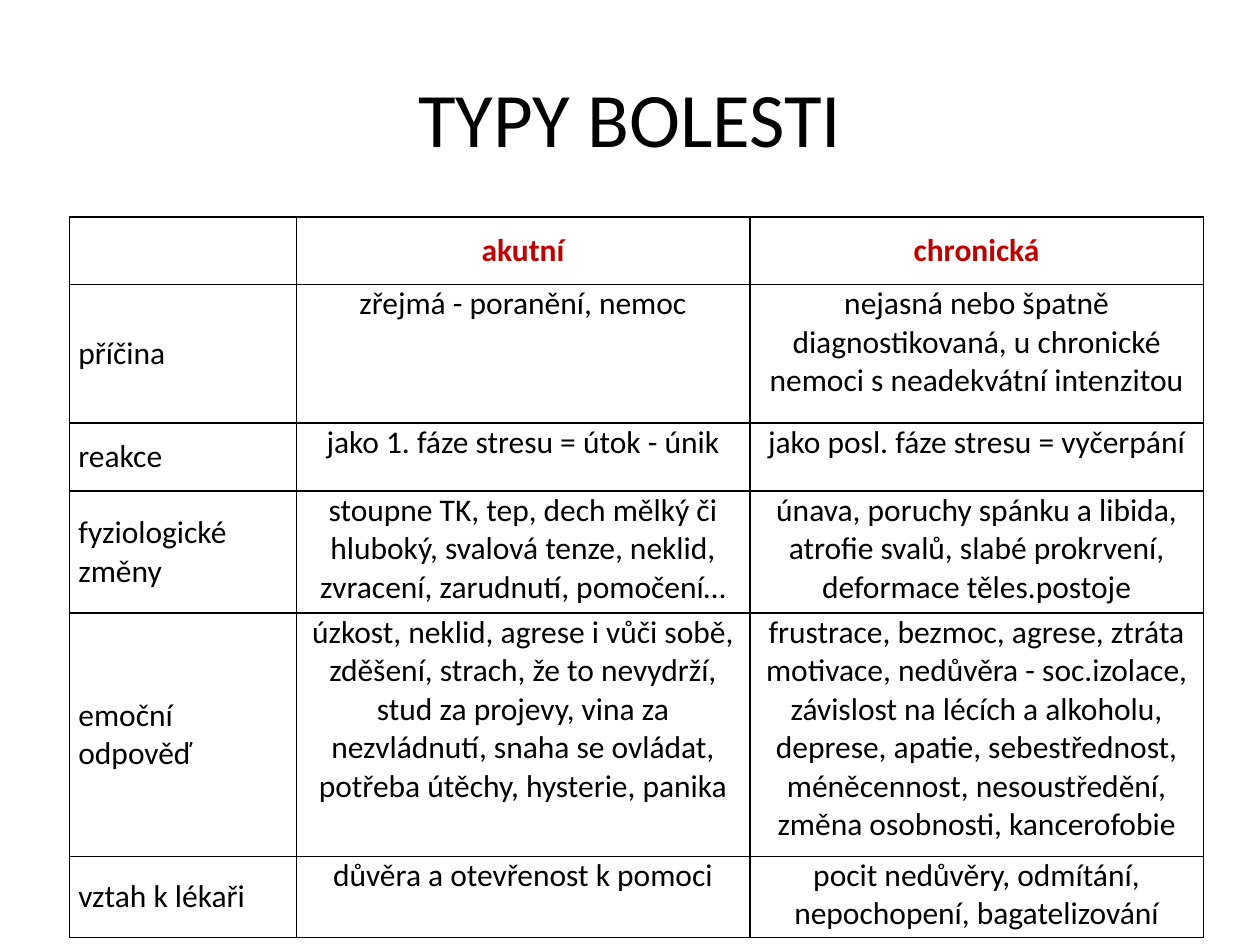
import pptx
import pptx.dml.color
import pptx.enum.text
import pptx.oxml
import pptx.oxml.ns
import pptx.util
from pptx.util import Cm

ALIGN = pptx.enum.text.PP_ALIGN
ANCHOR = pptx.enum.text.MSO_ANCHOR
BLACK, RED, WHITE = "000000", "C00000", "FFFFFF"
COLUMN_WIDTHS = (4.57, 9.14, 9.14)
ROW_HEIGHTS = (1.37, 2.79, 1.37, 2.46, 4.9, 1.63)
ROWS = (
    ("", "akutní", "chronická"),
    ("příčina", "zřejmá - poranění, nemoc",
     "nejasná nebo špatně diagnostikovaná, u chronické nemoci s neadekvátní intenzitou"),
    ("reakce", "jako 1. fáze stresu = útok - únik",
     "jako posl. fáze stresu = vyčerpání"),
    ("fyziologické\nzměny",
     "stoupne TK, tep, dech mělký či hluboký, svalová tenze, neklid, zvracení, "
     "zarudnutí, pomočení…",
     "únava, poruchy spánku a libida, atrofie svalů, slabé prokrvení, "
     "deformace těles.postoje"),
    ("emoční odpověď",
     "úzkost, neklid, agrese i vůči sobě, zděšení, strach, že to nevydrží, "
     "stud za projevy, vina za nezvládnutí, snaha se ovládat, potřeba útěchy, "
     "hysterie, panika",
     "frustrace, bezmoc, agrese, ztráta motivace, nedůvěra - soc.izolace, "
     "závislost na lécích a alkoholu, deprese, apatie, sebestřednost, "
     "méněcennost, nesoustředění, změna osobnosti, kancerofobie"),
    ("vztah k lékaři", "důvěra a otevřenost k pomoci",
     "pocit nedůvěry, odmítání, nepochopení, bagatelizování"),
)


def color(hex_value):
    return pptx.dml.color.RGBColor.from_string(hex_value)


def set_values(target, values):
    for name, value in values.items():
        setattr(target, name, value)


def format_text(text_frame, size, hex_value, alignment, bold=False):
    for paragraph in text_frame.paragraphs:
        paragraph.alignment = alignment
        set_values(paragraph.font, {"name": "Calibri", "size": pptx.util.Pt(size), "bold": bold})
        paragraph.font.color.rgb = color(hex_value)


def add_borders(cell, hex_value, width):
    properties = cell._tc.get_or_add_tcPr()
    for index, side in enumerate(("lnL", "lnR", "lnT", "lnB")):
        properties.insert(index, pptx.oxml.parse_xml(
            f'<a:{side} {pptx.oxml.ns.nsdecls("a")} w="{pptx.util.Pt(width)}">'
            f'<a:solidFill><a:srgbClr val="{hex_value}"/></a:solidFill></a:{side}>'))


def place_title(slide, left, top, width, height):
    title = slide.shapes.title
    set_values(title, {"left": left, "top": top, "width": width, "height": height})
    title.text_frame.text = "TYPY BOLESTI"
    title.text_frame.vertical_anchor = ANCHOR.MIDDLE
    format_text(title.text_frame, 44, BLACK, ALIGN.CENTER)


def fill_cell(cell, text, is_header, is_label):
    cell.text = text
    set_values(cell, {
        "margin_left": Cm(0.18), "margin_right": Cm(0.18),
        "margin_top": 0, "margin_bottom": 0,
        "vertical_anchor": ANCHOR.MIDDLE if is_header or is_label else ANCHOR.TOP,
    })
    format_text(cell.text_frame, 18, RED if is_header else BLACK,
                ALIGN.LEFT if is_label else ALIGN.CENTER, is_header)
    cell.fill.solid()
    cell.fill.fore_color.rgb = color(WHITE)
    add_borders(cell, BLACK, 1)


def add_pain_table(slide, left, top, width, height):
    table = slide.shapes.add_table(
        len(ROWS), len(COLUMN_WIDTHS), left, top, width, height).table
    set_values(table, {"first_row": False, "horz_banding": False})
    for column, share in zip(table.columns, COLUMN_WIDTHS):
        column.width = int(width * share / sum(COLUMN_WIDTHS))
    for row, share in zip(table.rows, ROW_HEIGHTS):
        row.height = int(height * share / sum(ROW_HEIGHTS))
    for row_index, texts in enumerate(ROWS):
        for column_index, text in enumerate(texts):
            fill_cell(table.cell(row_index, column_index), text,
                      row_index == 0, column_index == 0)


def main():
    presentation = pptx.Presentation()
    set_values(presentation, {"slide_width": Cm(25.4), "slide_height": Cm(19.05)})
    slide = presentation.slides.add_slide(presentation.slide_layouts[5])
    place_title(slide, Cm(1.27), Cm(0.76), Cm(22.86), Cm(3.18))
    add_pain_table(slide, Cm(1.4), Cm(4.37), Cm(22.86), Cm(14.53))
    presentation.save("out.pptx")


if __name__ == "__main__":
    main()
